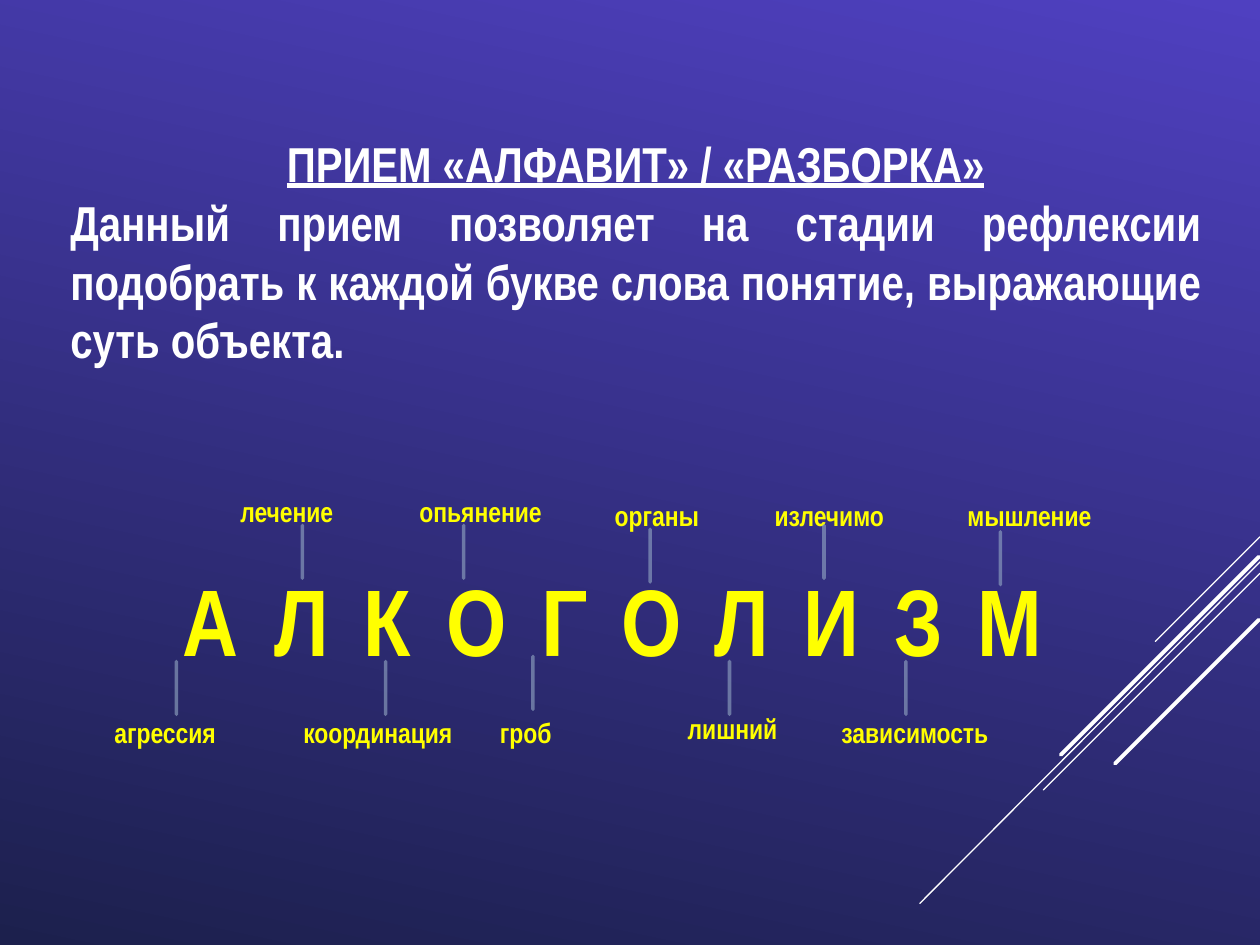
from dataclasses import dataclass

from lxml.etree import SubElement
from pptx import Presentation
from pptx.dml.color import RGBColor
from pptx.enum.shapes import MSO_CONNECTOR as Connector
from pptx.enum.text import MSO_AUTO_SIZE as AutoSize, PP_ALIGN as Align
from pptx.oxml.ns import qn
from pptx.util import Inches, Pt


@dataclass(frozen=True)
class Theme:
    font: str = "Arial Narrow"
    top: str = "4F40C0"
    bottom: str = "1C204D"
    angle: int = 102
    white: str = "FFFFFF"
    yellow: str = "FFFF00"
    tick: str = "94A9C4"
    outline: str = "002060"
    body_size: int = 28
    word_size: int = 54
    label_size: int = 16


class SlideBuilder:
    def __init__(self, slide, theme):
        self.slide = slide
        self.theme = theme

    def background(self):
        fill = self.slide.background.fill
        fill.gradient()
        fill.gradient_angle = 360 - self.theme.angle
        for stop, color in zip(fill.gradient_stops, (self.theme.top, self.theme.bottom)):
            stop.color.rgb = RGBColor.from_string(color)

    def text(self, box, lines, size, color, align=Align.LEFT):
        """Add a text box of bold paragraphs and return its paragraphs."""
        shape = self.slide.shapes.add_textbox(*map(Inches, box))
        text_frame = shape.text_frame
        text_frame.word_wrap = True
        text_frame.auto_size = AutoSize.SHAPE_TO_FIT_TEXT
        text_frame.text = "\n".join(lines)
        for paragraph in text_frame.paragraphs:
            paragraph.alignment = align
            font = paragraph.runs[0].font
            font.name = self.theme.font
            font.size = Pt(size)
            font.bold = True
            font.color.rgb = RGBColor.from_string(color)
        return text_frame.paragraphs

    def spread_word(self, box, word, spacing):
        """Add the large word with wide letter spacing and a thin outline."""
        theme = self.theme
        paragraph, = self.text(box, [word], theme.word_size, theme.yellow, Align.CENTER)
        properties = paragraph.runs[0]._r.get_or_add_rPr()
        properties.set("spc", str(spacing * 100))
        outline = SubElement(properties, qn("a:ln"), w=str(Pt(0.83)))
        fill = SubElement(outline, qn("a:solidFill"))
        SubElement(fill, qn("a:srgbClr"), val=theme.outline)
        properties.insert(0, outline)

    def line(self, start, end, color, width, opacity=100):
        points = map(Inches, (*start, *end))
        connector = self.slide.shapes.add_connector(Connector.STRAIGHT, *points)
        connector.line.width = Pt(width)
        connector.line.color.rgb = RGBColor.from_string(color)
        outline = connector.line._ln
        outline.set("cap", "rnd")
        if opacity < 100:
            color_element = outline.find(".//" + qn("a:srgbClr"))
            SubElement(color_element, qn("a:alpha"), val=str(opacity * 1000))
        SubElement(connector._element.spPr, qn("a:effectLst"))


# Diagonal lines: right end, horizontal and vertical run, width
DIAGONALS = [
    (10, 4.26, 0.83, 0.83, 0.75),
    (10, 4.46, 2.7, 2.71, 0.75),
    (10, 4.55, 1.72, 1.72, 0.75),
    (9.99, 4.42, 1.57, 1.57, 2.25),
    (9.99, 4.92, 1.14, 1.14, 2.25),
]

# Labels: word, left, top, width, then tick x and tick top
LABELS = [
    ("агрессия", 0.81, 5.63, 1.33, 1.4, 5.25),
    ("лечение", 1.81, 3.88, 1.17, 2.4, 4.17),
    ("координация", 2.31, 5.63, 1.67, 3.06, 5.25),
    ("опьянение", 3.23, 3.88, 1.42, 3.68, 4.17),
    ("гроб", 3.87, 5.63, 1.17, 4.23, 5.21),
    ("органы", 4.78, 3.91, 1.17, 5.16, 4.2),
    ("лишний", 5.36, 5.6, 1.17, 5.79, 5.25),
    ("излечимо", 6.05, 3.91, 1.33, 6.54, 4.17),
    ("зависимость", 6.58, 5.63, 1.75, 7.19, 5.25),
    ("мышление", 7.58, 3.91, 1.5, 7.94, 4.22),
]
LABEL_HEIGHT = 0.37
TICK_LENGTH = 0.42


def main():
    presentation = Presentation()
    presentation.slide_width, presentation.slide_height = Inches(10), Inches(7.5)
    theme = Theme()
    slide = presentation.slides.add_slide(presentation.slide_layouts[6])
    builder = SlideBuilder(slide, theme)

    # Background and diagonal decoration
    builder.background()
    for x, y, run, drop, width in DIAGONALS:
        builder.line((x, y), (x - run, y + drop), theme.white, width)

    # Heading and description
    heading, description = builder.text(
        (0.46, 1.01, 9.17, 1.99),
        ["ПРИЕМ «АЛФАВИТ» / «РАЗБОРКА»",
         "Данный прием позволяет на стадии рефлексии подобрать к каждой "
         "букве слова понятие, выражающие суть объекта."],
        theme.body_size, theme.white, Align.CENTER)
    heading.runs[0].font.underline = True
    description.alignment = Align.JUSTIFY

    # Word with a label and a tick for each letter
    builder.spread_word((0.81, 4.41, 8.11, 1.01), "АЛКОГОЛИЗМ", spacing=20)
    for word, left, top, width, *_ in LABELS:
        builder.text((left, top, width, LABEL_HEIGHT), [word],
                     theme.label_size, theme.yellow)
    for *_, x, y in LABELS:
        builder.line((x, y), (x, y + TICK_LENGTH), theme.tick, 2, opacity=60)

    presentation.save("out.pptx")


if __name__ == "__main__":
    main()
